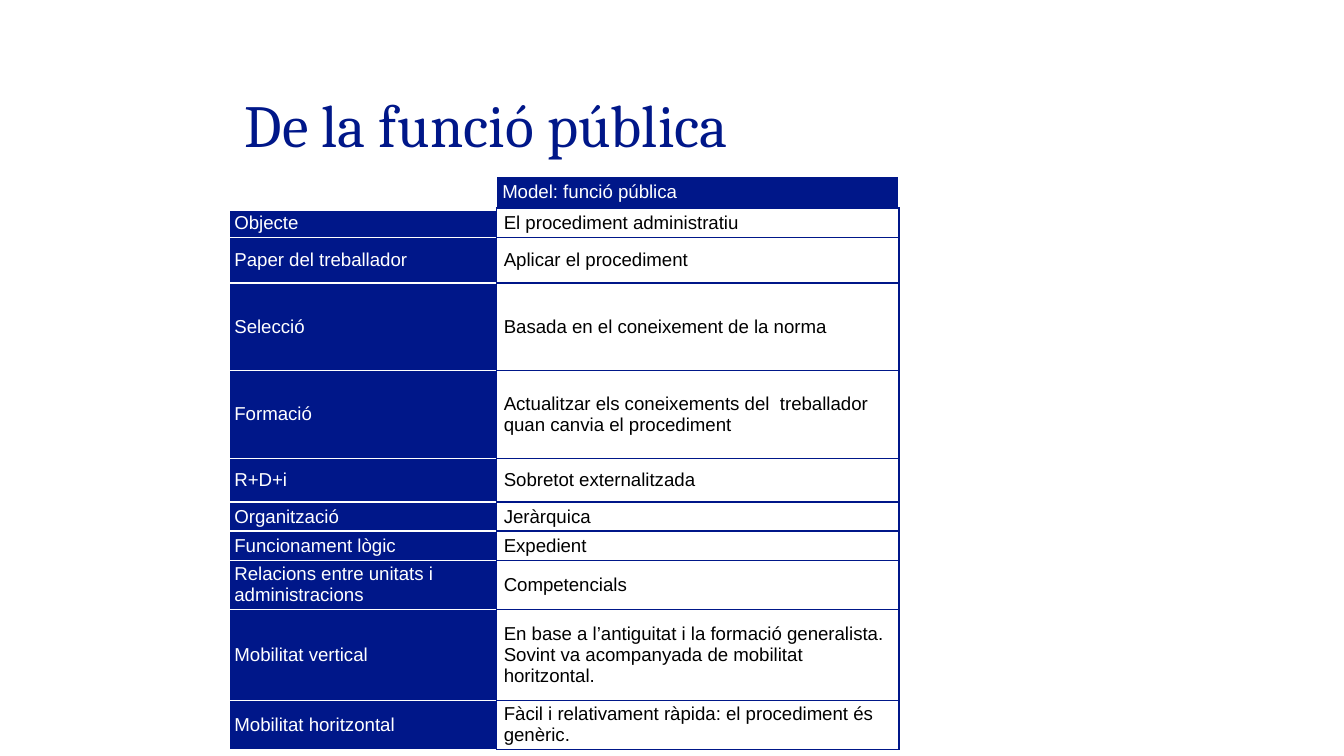
"""Build the slide that describes the public service model."""
from dataclasses import dataclass

from lxml import etree
from pptx import Presentation
from pptx.dml.color import RGBColor
from pptx.enum import text
from pptx.oxml import ns
from pptx.util import Pt


@dataclass(frozen=True)
class Theme:
    """Colours, fonts and type sizes."""
    navy: str = "001789"
    white: str = "FFFFFF"
    black: str = "000000"
    title_font: str = "Cambria"
    table_font: str = "Arial"
    title_size: int = 32
    table_size: int = 10


THEME = Theme()
HEADER = "Model: funció pública"
ROWS = [
    ("Objecte", "El procediment administratiu", 15.7),
    ("Paper del treballador", "Aplicar el procediment", 24.4),
    ("Selecció", "Basada en el coneixement de la norma", 47),
    ("Formació", "Actualitzar els coneixements del  treballador quan canvia el procediment", 47),
    ("R+D+i", "Sobretot externalitzada", 23.4),
    ("Organització", "Jeràrquica", 15.7),
    ("Funcionament lògic", "Expedient", 15.7),
    ("Relacions entre unitats i administracions", "Competencials", 26.2),
    ("Mobilitat vertical", "En base a l’antiguitat i la formació generalista. "
     "Sovint va acompanyada de mobilitat horitzontal.", 48.8),
    ("Mobilitat horitzontal", "Fàcil i relativament ràpida: el procediment és genèric.", 26.2),
]
HEADER_HEIGHT = 16.9
COLUMN_WIDTHS = (143.5, 215.5)


def format_runs(paragraph, font_name, size, color):
    """Apply one font, size and colour to every run."""
    for run in paragraph.runs:
        run.font.name = font_name
        run.font.size = Pt(size)
        run.font.color.rgb = RGBColor.from_string(color)


def add_title(slide, wording):
    """Add the title, resting on the bottom of its box."""
    shape = slide.shapes.add_textbox(Pt(124), Pt(20), Pt(574.5), Pt(69.3))
    frame = shape.text_frame
    frame.word_wrap = True
    frame.vertical_anchor = text.MSO_ANCHOR.BOTTOM
    frame.text = wording
    paragraph = frame.paragraphs[0]
    paragraph.line_spacing = 0.9
    format_runs(paragraph, THEME.title_font, THEME.title_size, THEME.navy)


def set_borders(cell, left, right, top, bottom, bottom_width=1):
    """Draw the four cell borders in the given colours."""
    properties = cell._tc.get_or_add_tcPr()
    sides = (("L", left, 1), ("R", right, 1), ("T", top, 1), ("B", bottom, bottom_width))
    for index, (side, color, width) in enumerate(sides):
        line = etree.Element(ns.qn(f"a:ln{side}"), w=str(Pt(width)))
        fill = etree.SubElement(line, ns.qn("a:solidFill"))
        etree.SubElement(fill, ns.qn("a:srgbClr"), val=color)
        properties.insert(index, line)


def fill_cell(cell, wording, fill, color, inset):
    """Set the fill, margins and wording of a cell."""
    cell.fill.solid()
    cell.fill.fore_color.rgb = RGBColor.from_string(fill)
    cell.vertical_anchor = text.MSO_ANCHOR.MIDDLE
    cell.margin_left = cell.margin_right = Pt(inset)
    cell.margin_top = cell.margin_bottom = Pt(0)
    paragraph = cell.text_frame.paragraphs[0]
    if wording:
        paragraph.text = wording
        format_runs(paragraph, THEME.table_font, THEME.table_size, color)
    else:
        etree.SubElement(paragraph._p, ns.qn("a:endParaRPr"), sz=str(THEME.table_size * 100))


def add_model_table(slide):
    """Add the table with a label and a description in each row."""
    heights = [HEADER_HEIGHT] + [height for _, _, height in ROWS]
    shape = slide.shapes.add_table(len(heights), len(COLUMN_WIDTHS), Pt(122.6), Pt(94.6),
                                   Pt(sum(COLUMN_WIDTHS)), Pt(sum(heights)))
    table = shape.table
    table.first_row = table.horz_banding = False
    for column, width in zip(table.columns, COLUMN_WIDTHS):
        column.width = Pt(width)
    for row, height in zip(table.rows, heights):
        row.height = Pt(height)

    navy, white = THEME.navy, THEME.white
    corner, header = table.cell(0, 0), table.cell(0, 1)
    fill_cell(corner, "", white, white, 3)
    set_borders(corner, white, white, white, white, bottom_width=3)
    fill_cell(header, HEADER, navy, white, 3)
    set_borders(header, white, white, white, navy)
    for index, (label, description, _) in enumerate(ROWS, start=1):
        label_cell, description_cell = table.cell(index, 0), table.cell(index, 1)
        fill_cell(label_cell, label, navy, white, 3)
        set_borders(label_cell, white, navy, white, white)
        fill_cell(description_cell, description, white, THEME.black, 3.8)
        set_borders(description_cell, navy, navy, navy, navy)


def main():
    """Create and save the presentation."""
    presentation = Presentation()
    presentation.slide_width = Pt(720)
    presentation.slide_height = Pt(405)
    slide = presentation.slides.add_slide(presentation.slide_layouts[6])
    add_title(slide, "De la funció pública")
    add_model_table(slide)
    presentation.save("out.pptx")


if __name__ == "__main__":
    main()
